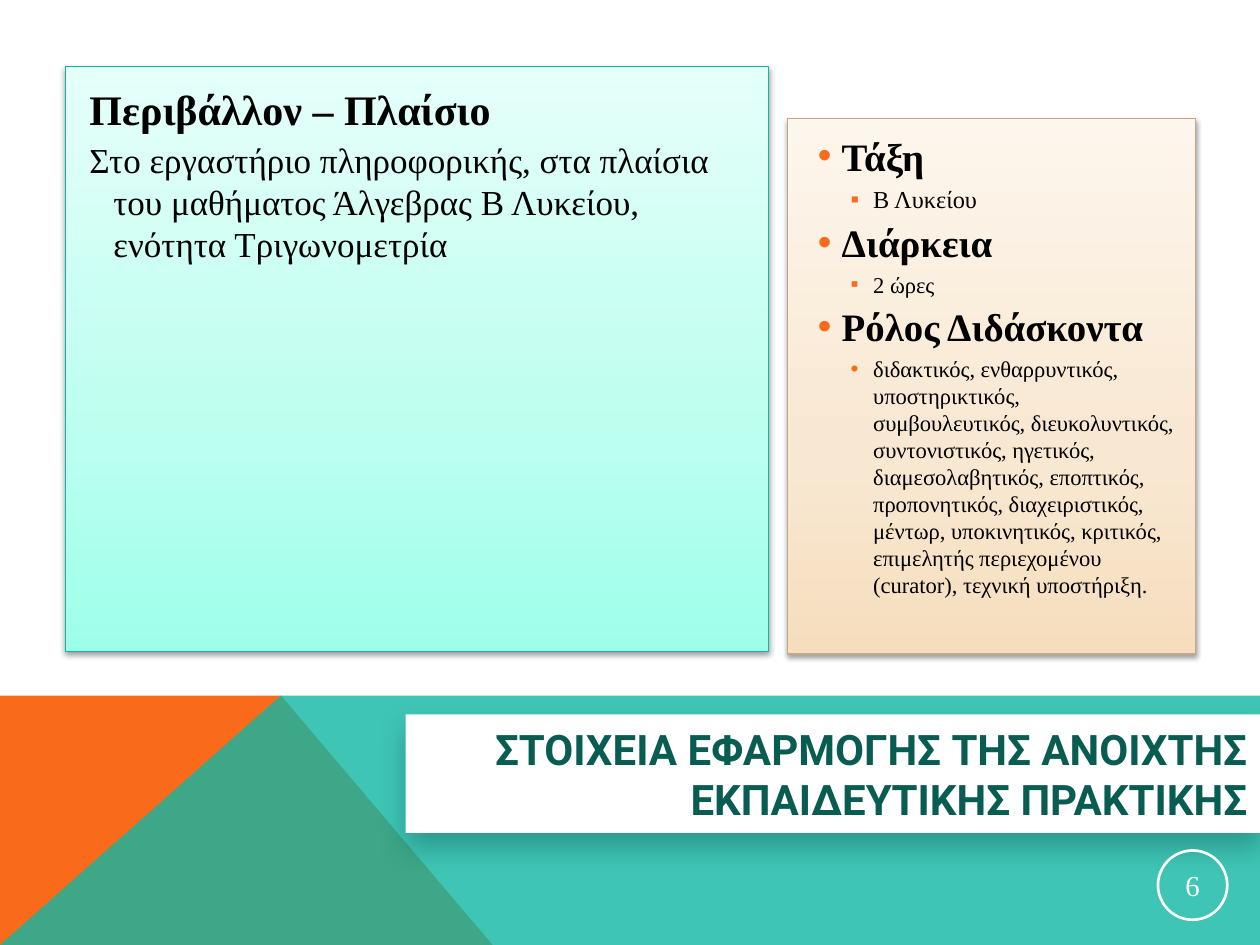
from lxml.etree import SubElement
from pptx import Presentation
from pptx.dml.color import RGBColor
from pptx.enum.shapes import MSO_SHAPE as Preset
from pptx.enum.text import MSO_ANCHOR as Anchor, MSO_AUTO_SIZE as AutoSize, PP_ALIGN as Align
from pptx.oxml.ns import qn
from pptx.util import Emu, Inches, Pt

BLACK = RGBColor(0x00, 0x00, 0x00)
WHITE = RGBColor(0xFF, 0xFF, 0xFF)
ORANGE = RGBColor(0xF9, 0x6A, 0x1B)
TEAL = RGBColor(0x10, 0xB7, 0xA3)
TEAL_EDGE = RGBColor(0x0C, 0xB7, 0xA3)
DARK_TEAL = RGBColor(0x08, 0x5C, 0x52)
SAND_EDGE = RGBColor(0xBF, 0xA9, 0x89)
SAND_SHADES = [RGBColor(0xF6, 0xDE, 0xBD), RGBColor(0xF8, 0xE7, 0xD1), RGBColor(0xFD, 0xF6, 0xEC)]
MINT_SHADES = [RGBColor(0x9D, 0xFF, 0xEA), RGBColor(0xBA, 0xFF, 0xEF), RGBColor(0xE5, 0xFF, 0xF9)]
SHADE_STOPS = (0, 35, 100)
SERIF, SANS = "Times New Roman", "Roboto"
CELL = Inches(0.1)

TITLE = "ΣΤΟΙΧΕΙΑ ΕΦΑΡΜΟΓΗΣ ΤΗΣ ΑΝΟΙΧΤΗΣ ΕΚΠΑΙΔΕΥΤΙΚΗΣ ΠΡΑΚΤΙΚΗΣ"
CONTEXT = "Στο εργαστήριο πληροφορικής, στα πλαίσια του μαθήματος Άλγεβρας Β Λυκείου, ενότητα Τριγωνομετρία"
ROLES = (
    "διδακτικός, ενθαρρυντικός, υποστηρικτικός, συμβουλευτικός, διευκολυντικός, συντονιστικός, "
    "ηγετικός, διαμεσολαβητικός, εποπτικός, προπονητικός, διαχειριστικός, μέντωρ, υποκινητικός, "
    "κριτικός, επιμελητής περιεχομένου (curator), τεχνική υποστήριξη."
)
DETAILS = [("Τάξη", "Β Λυκείου", 13.9, "▪"), ("Διάρκεια", "2 ώρες", 12.9, "▪"), ("Ρόλος Διδάσκοντα", ROLES, 12.9, "•")]


def grid(*cells):
    """Turn grid columns and rows into lengths."""
    return [Emu(round(cell * CELL)) for cell in cells]


def color_node(parent, color, alpha=100):
    """Add a colour with its opacity in percent to an XML parent."""
    node = SubElement(parent, qn("a:srgbClr"), val=str(color))
    if alpha < 100:
        SubElement(node, qn("a:alpha"), val=str(alpha * 1000))


def write(frame, text, size, font=SERIF, color=BLACK, bold=False, align=Align.LEFT,
          level=0, indent=(0, 0), before=0, bullet=None):
    """Write a formatted paragraph at the end of a text frame."""
    paragraph = frame.paragraphs[0] if not frame.text else frame.add_paragraph()
    paragraph.text = text
    paragraph.level, paragraph.alignment = level, align
    paragraph.space_before, paragraph.space_after = Pt(before), Pt(0)
    properties = paragraph._p.get_or_add_pPr()
    properties.set("marL", str(Inches(indent[0])))
    properties.set("indent", str(Inches(indent[1])))
    if bullet:
        color_node(SubElement(properties, qn("a:buClr")), ORANGE)
        SubElement(properties, qn("a:buFont"), typeface="Arial")
        SubElement(properties, qn("a:buChar"), char=bullet)
    else:
        SubElement(properties, qn("a:buNone"))
    font_style = paragraph.runs[0].font
    font_style.name, font_style.size, font_style.bold = font, Pt(size), bold
    font_style.color.rgb = color


class SlideBuilder:
    """Hold the house style and the current slide."""

    def __init__(self, slide):
        """Start on a slide."""
        self.slide = slide

    def shadow(self, shape, color, alpha, blur, distance):
        """Cast a soft shadow straight down."""
        shape.shadow.inherit = False
        effects = shape.element.spPr.find(qn("a:effectLst"))
        outer = SubElement(effects, qn("a:outerShdw"), blurRad=str(Pt(blur)), dist=str(Pt(distance)),
                           dir="5400000", algn="t", rotWithShape="0")
        color_node(outer, color, alpha)

    def facet(self, points, color, alpha=100):
        """Draw a flat polygon."""
        start, *others = [grid(*point) for point in points]
        builder = self.slide.shapes.build_freeform(*start)
        builder.add_line_segments(others, close=True)
        shape = builder.convert_to_shape()
        shape.shadow.inherit = False
        shape.fill.solid()
        shape.fill.fore_color.rgb = color
        shape.line.fill.background()
        if alpha < 100:
            node = shape.element.spPr.find(qn("a:solidFill")).find(qn("a:srgbClr"))
            SubElement(node, qn("a:alpha"), val=str(alpha * 1000))

    def panel(self, box, shades, edge):
        """Draw a gradient panel with a thin edge."""
        shape = self.slide.shapes.add_shape(Preset.RECTANGLE, *grid(*box))
        shape.fill.gradient()
        shape.fill.gradient_angle = 90
        stops = shape.element.spPr.find(qn("a:gradFill")).find(qn("a:gsLst"))
        for stop in list(stops):
            stops.remove(stop)
        for position, shade in zip(SHADE_STOPS, shades):
            color_node(SubElement(stops, qn("a:gs"), pos=str(position * 1000)), shade)
        shape.line.color.rgb = edge
        shape.line.width = Pt(0.75)
        self.shadow(shape, BLACK, 38, 3.1, 1.6)

    def placeholder(self, index, box, anchor=Anchor.TOP):
        """Move a placeholder to the front and return it."""
        shape = self.slide.placeholders[index]
        shape.left, shape.top, shape.width, shape.height = grid(*box)
        shape.element.getparent().append(shape.element)
        frame = shape.text_frame
        frame.word_wrap, frame.auto_size, frame.vertical_anchor = True, AutoSize.NONE, anchor
        return shape

    def title(self, text, box):
        """Set the title on a white banner."""
        shape = self.placeholder(0, box, Anchor.MIDDLE)
        shape.fill.solid()
        shape.fill.fore_color.rgb = WHITE
        self.shadow(shape, DARK_TEAL, 40, 16, 8)
        write(shape.text_frame, text, 24, font=SANS, color=DARK_TEAL, bold=True, align=Align.RIGHT)

    def page_badge(self, text, box):
        """Draw the page number in a ring."""
        shape = self.slide.shapes.add_shape(Preset.OVAL, *grid(*box))
        shape.shadow.inherit = False
        shape.fill.background()
        shape.line.color.rgb = WHITE
        shape.line.width = Pt(1.5)
        frame = shape.text_frame
        frame.margin_left = frame.margin_right = frame.margin_top = frame.margin_bottom = Inches(0.01)
        frame.vertical_anchor = Anchor.MIDDLE
        write(frame, text, 16.5, color=WHITE, align=Align.CENTER)


def main():
    """Build and save the slide."""
    presentation = Presentation()
    presentation.slide_width, presentation.slide_height = grid(100, 75)
    builder = SlideBuilder(presentation.slides.add_slide(presentation.slide_layouts[3]))

    builder.facet([(0, 75), (0, 55.2), (22.3, 55.2), (39.1, 75)], ORANGE)
    builder.facet([(0, 75), (22.3, 55.2), (100, 55.2), (100, 75)], TEAL, alpha=80)
    builder.panel((62.5, 9.4, 32.4, 42.5), SAND_SHADES, SAND_EDGE)
    builder.panel((5.2, 5.3, 55.8, 46.4), MINT_SHADES, TEAL_EDGE)
    builder.title(TITLE, (32.2, 56.7, 67.8, 9.4))

    context = builder.placeholder(1, (6.1, 6.1, 54.2, 45.2)).text_frame
    write(context, "Περιβάλλον – Πλαίσιο", 24, bold=True, indent=(0.38, -0.38))
    write(context, CONTEXT, 20, level=1, indent=(0.19, -0.19), before=3)

    details = builder.placeholder(2, (63.9, 10, 30.3, 40.6)).text_frame
    for number, (heading, text, size, bullet) in enumerate(DETAILS):
        write(details, heading, 22.2, bold=True, level=1, indent=(0.19, -0.19),
              before=3 if number else 0, bullet="•")
        write(details, text, size, level=2, indent=(0.44, -0.18), before=3, bullet=bullet)

    builder.page_badge("6", (91.9, 67.5, 5.5, 5.5))
    presentation.save("out.pptx")


if __name__ == "__main__":
    main()
